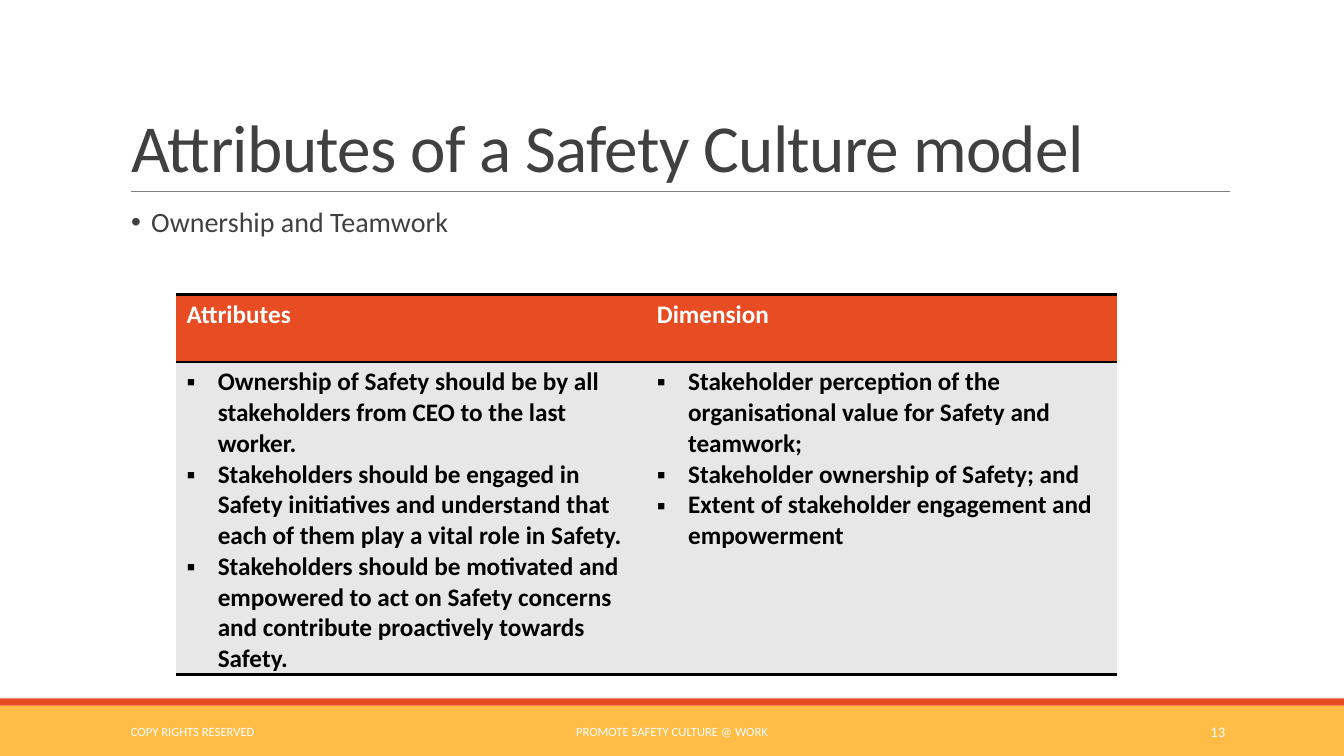
from dataclasses import dataclass
from lxml import etree
from pptx import Presentation
from pptx.dml.color import RGBColor
from pptx.enum.shapes import MSO_CONNECTOR, MSO_SHAPE
from pptx.enum.text import MSO_ANCHOR, MSO_AUTO_SIZE, PP_ALIGN
from pptx.oxml.ns import qn
from pptx.util import Inches, Pt

RECT = MSO_SHAPE.RECTANGLE
LINE = MSO_CONNECTOR.STRAIGHT
LEFT, CENTER, RIGHT = PP_ALIGN.LEFT, PP_ALIGN.CENTER, PP_ALIGN.RIGHT
TOP, MIDDLE, BOTTOM = MSO_ANCHOR.TOP, MSO_ANCHOR.MIDDLE, MSO_ANCHOR.BOTTOM
NO_FIT = MSO_AUTO_SIZE.NONE


@dataclass(frozen=True)
class Theme:
    font: str = "Calibri"
    ink: str = "404040"
    black: str = "000000"
    white: str = "FFFFFF"
    rule: str = "808080"
    red: str = "E84C22"
    gold: str = "FFBD47"
    pale: str = "E7E7E7"
    title: float = 48
    lead: float = 20
    cell: float = 18
    foot: float = 9
    page: float = 10.5


THEME = Theme()
HEADS = ["Attributes", "Dimension"]
POINTS = [
    [
        "Ownership of Safety should be by all stakeholders from CEO to the last worker.",
        "Stakeholders should be engaged in Safety initiatives and understand that "
        "each of them play a vital role in Safety.",
        "Stakeholders should be motivated and empowered to act on Safety concerns "
        "and contribute proactively towards Safety.",
    ],
    [
        "Stakeholder perception of the organisational value for Safety and teamwork;",
        "Stakeholder ownership of Safety; and",
        "Extent of stakeholder engagement and empowerment",
    ],
]


def color(code):
    return RGBColor.from_string(code)


def style(para, size, ink, bold=False, align=LEFT):
    para.alignment = align
    for run in para.runs:
        font = run.font
        font.name, font.size, font.bold = THEME.font, Pt(size), bold
        font.color.rgb = color(ink)


def bullet(para, mark, margin, hang):
    props = para._p.get_or_add_pPr()
    props.set("marL", str(Inches(margin)))
    props.set("indent", str(-Inches(hang)))
    etree.SubElement(props, qn("a:buFont"), typeface="Arial")
    etree.SubElement(props, qn("a:buChar"), char=mark)


def label(slide, box, text, size, ink, align=LEFT, anchor=MIDDLE):
    frame = slide.shapes.add_textbox(*map(Inches, box)).text_frame
    frame.word_wrap = True
    frame.vertical_anchor = anchor
    frame.text = text
    style(frame.paragraphs[0], size, ink, align=align)
    return frame


def band(slide, box, fill):
    shape = slide.shapes.add_shape(RECT, *map(Inches, box))
    shape.shadow.inherit = False
    shape.fill.solid()
    shape.fill.fore_color.rgb = color(fill)
    shape.line.fill.background()


def heading(slide, box, text):
    left, top, width, height = box
    title = slide.shapes.title
    title.left, title.top, title.width, title.height = map(Inches, box)
    frame = title.text_frame
    frame.text = text
    frame.word_wrap = True
    frame.auto_size = NO_FIT
    frame.vertical_anchor = BOTTOM
    para = frame.paragraphs[0]
    para.line_spacing = 0.85
    style(para, THEME.title, THEME.ink)
    para.runs[0].font._element.set("spc", "-50")
    base = Inches(top + height)
    rule = slide.shapes.add_connector(
        LINE, Inches(left + 0.1), base, Inches(left + width), base)
    rule.line.color.rgb = color(THEME.rule)
    rule.line.width = Pt(0.5)
    etree.SubElement(rule._element.spPr, qn("a:effectLst"))


def lead(slide, box, text):
    frame = label(slide, box, text, THEME.lead, THEME.ink, anchor=TOP)
    frame.margin_left = frame.margin_right = 0
    para = frame.paragraphs[0]
    para.line_spacing = 0.9
    bullet(para, "•", 0.3, 0.2)


def edges(cell):
    props = cell._tc.get_or_add_tcPr()
    for spot, side in enumerate(["lnL", "lnR", "lnT", "lnB"]):
        edge = etree.Element(qn(f"a:{side}"), w=str(Pt(2)))
        if side in ("lnT", "lnB"):
            fill = etree.SubElement(edge, qn("a:solidFill"))
            etree.SubElement(fill, qn("a:srgbClr"), val=THEME.black)
        else:
            etree.SubElement(edge, qn("a:noFill"))
        props.insert(spot, edge)


def fill_cell(cell, lines, fill, ink, mark=None):
    cell.fill.solid()
    cell.fill.fore_color.rgb = color(fill)
    edges(cell)
    frame = cell.text_frame
    frame.text = "\n".join(lines)
    for para in frame.paragraphs:
        if mark:
            bullet(para, mark, 0.31, 0.31)
        style(para, THEME.cell, ink, bold=True)


def grid(slide, box, head):
    table = slide.shapes.add_table(2, len(HEADS), *map(Inches, box)).table
    table.horz_banding = False
    table.rows[0].height = Inches(head)
    table.rows[1].height = Inches(box[3] - head)
    for col, (name, points) in enumerate(zip(HEADS, POINTS)):
        fill_cell(table.cell(0, col), [name], THEME.red, THEME.white)
        fill_cell(table.cell(1, col), points, THEME.pale, THEME.black, "▪")


def footer(slide, box):
    left, top, width, height = box
    edge = 0.07
    band(slide, (left, top + edge, width, height - edge), THEME.gold)
    band(slide, (left, top, width, edge), THEME.red)
    parts = [
        (1.2, 2.7, "COPY RIGHTS RESERVED", THEME.foot, LEFT),
        (4.03, 5.27, "PROMOTE SAFETY CULTURE @ WORK", THEME.foot, CENTER),
        (10.82, 1.43, "13", THEME.page, RIGHT),
    ]
    for start, wide, text, size, align in parts:
        place = (left + start, top + 0.13, wide, 0.4)
        label(slide, place, text, size, THEME.white, align)


def main():
    deck = Presentation()
    deck.slide_width, deck.slide_height = Inches(13.33), Inches(7.5)
    slide = deck.slides.add_slide(deck.slide_layouts[5])
    footer(slide, (0, 6.93, 13.33, 0.57))
    heading(slide, (1.2, 0.31, 11, 1.59), "Attributes of a Safety Culture model")
    lead(slide, (1.2, 2.02, 11, 0.5), "Ownership and Teamwork")
    grid(slide, (1.75, 2.92, 9.33, 3.77), 0.67)
    deck.save("out.pptx")


if __name__ == "__main__":
    main()
